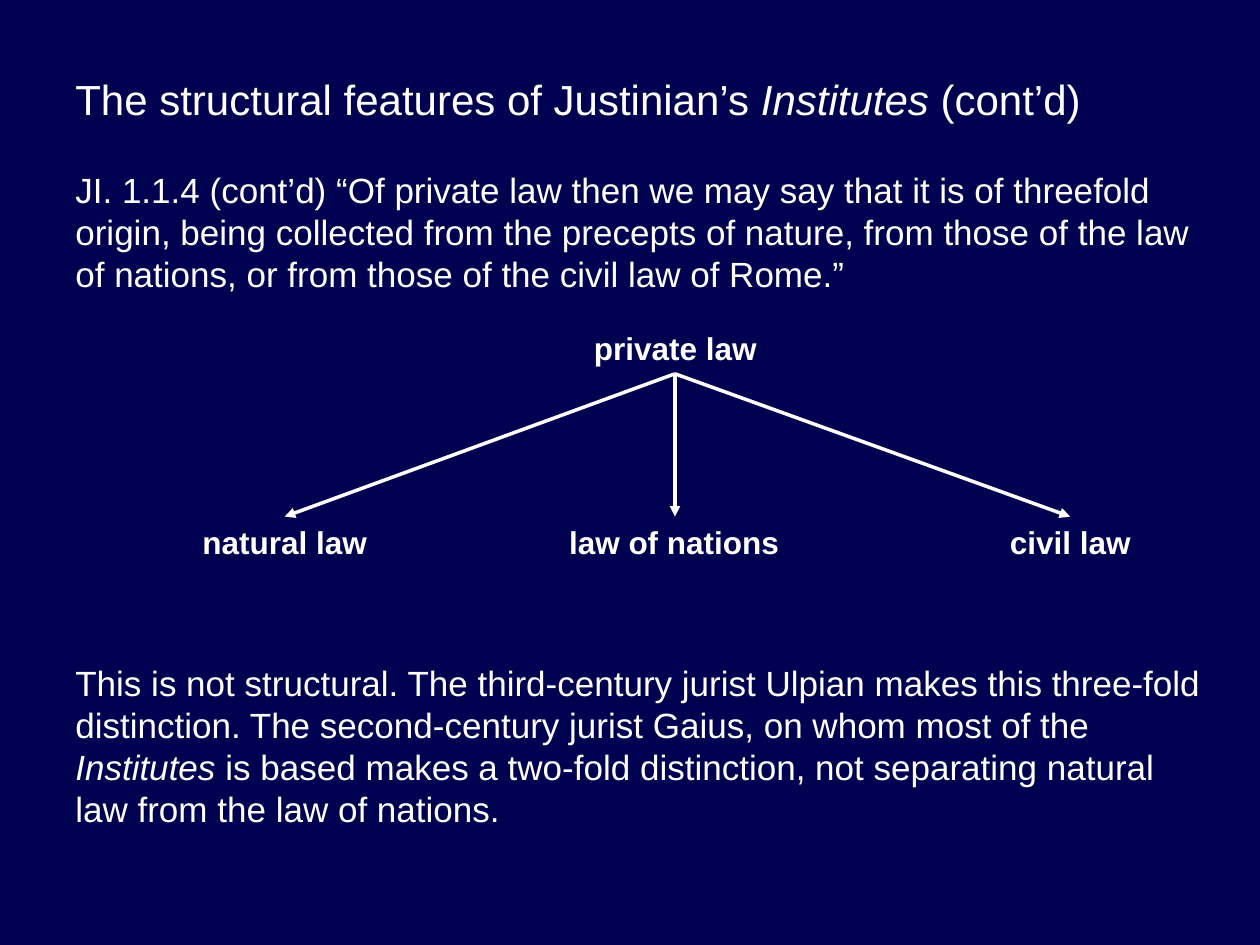
from lxml import etree
from pptx import Presentation
from pptx.dml.color import RGBColor
from pptx.enum import shapes, text
from pptx.oxml.ns import qn
from pptx.util import Pt

NAVY = RGBColor(0x00, 0x00, 0x50)
WHITE = RGBColor(0xFF, 0xFF, 0xFF)
LEFT, CENTER = text.PP_ALIGN.LEFT, text.PP_ALIGN.CENTER

deck = Presentation()
deck.slide_width, deck.slide_height = Pt(720), Pt(540)
slide = deck.slides.add_slide(deck.slide_layouts[6])
slide.background.fill.solid()
slide.background.fill.fore_color.rgb = NAVY


def write(box, runs, size, align=LEFT, bold=False):
    frame = slide.shapes.add_textbox(*map(Pt, box)).text_frame
    frame.word_wrap = True
    paragraph = frame.paragraphs[0]
    paragraph.alignment = align
    paragraph.line_spacing = Pt(size * 1.2)
    for words, italic in runs:
        run = paragraph.add_run()
        run.text = words
        run.font.color.rgb = WHITE
        styles = {"name": "Arial", "size": Pt(size), "bold": bold, "italic": italic}
        for key, value in styles.items():
            setattr(run.font, key, value)


write((36, 38.2, 684, 33.8), [
    ("The structural features of Justinian’s ", False),
    ("Institutes", True),
    (" (cont’d)", False),
], 24)

write((36, 92.9, 665.3, 79.9), [
    ("JI. 1.1.4 (cont’d) “Of private law then we may say that it is of threefold "
     "origin, being collected from the precepts of nature, from those of the law "
     "of nations, or from those of the civil law of Rome.”", False),
], 20)

root_x, root_y, branch_y = 385.7, 213.6, 295.2
write((281.5, 184.3, 208.8, 28.8), [("private law", False)], 18, CENTER, True)

branches = [
    ("natural law", 54, 217.4, 162.7),
    ("law of nations", 301.7, 167, root_x),
    ("civil law", 512.6, 198, 611.5),
]
for label, left, width, tip_x in branches:
    write((left, branch_y, width, 28.8), [(label, False)], 18, CENTER, True)
    arrow = slide.shapes.add_connector(
        shapes.MSO_CONNECTOR.STRAIGHT, Pt(root_x), Pt(root_y), Pt(tip_x), Pt(branch_y))
    arrow.line.color.rgb = WHITE
    arrow.line.width = Pt(2)
    etree.SubElement(arrow.line._get_or_add_ln(), qn("a:tailEnd"), type="triangle")
    etree.SubElement(arrow._element.spPr, qn("a:effectLst"))

write((36, 374.4, 665.3, 104.4), [
    ("This is not structural. The third-century jurist Ulpian makes this three-fold "
     "distinction. The second-century jurist Gaius, on whom most of the ", False),
    ("Institutes", True),
    (" is based makes a two-fold distinction, not separating natural law from the "
     "law of nations.", False),
], 20)

deck.save("out.pptx")
